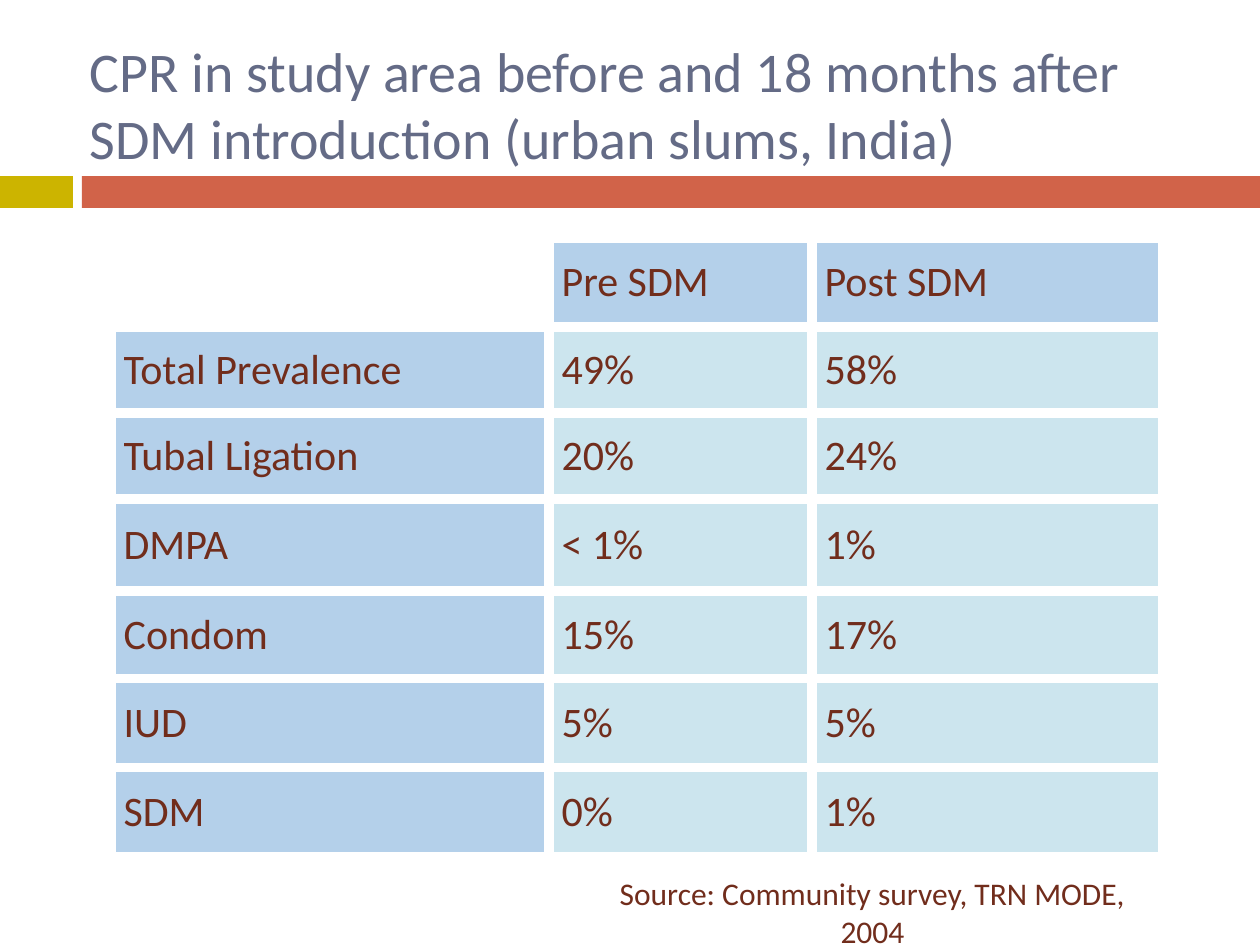
from lxml import etree
from pptx import Presentation
from pptx import util as u
from pptx.dml.color import RGBColor
from pptx.enum import shapes, text
from pptx.oxml.ns import qn

FONT = "Calibri"
BROWN, SLATE, WHITE = "712D1C", "646B86", "FFFFFF"
GOLD, RUST = "CCB400", "D16349"
LABEL_BLUE, VALUE_BLUE = "B4D0EA", "CCE5EE"
COLUMN_WIDTHS = (438, 263, 351)
ROW_HEIGHTS = (89, 86, 86, 92, 88, 89, 89)
PREVALENCE = (
    ("", "Pre SDM", "Post SDM"),
    ("Total Prevalence", "49%", "58%"),
    ("Tubal Ligation", "20%", "24%"),
    ("DMPA", "< 1%", "1%"),
    ("Condom", "15%", "17%"),
    ("IUD", "5%", "5%"),
    ("SDM", "0%", "1%"),
)


def px(length):
    """Turn pixels into EMU."""
    return u.Emu(round(length * 914400 / 126))


def paint(target, colour):
    """Give a fill or font colour format a hex colour."""
    target.rgb = RGBColor.from_string(colour)


def fill(item, colour):
    """Fill a shape or cell with a solid colour."""
    item.fill.solid()
    paint(item.fill.fore_color, colour)


def write(paragraph, words, size, colour, align=text.PP_ALIGN.LEFT):
    """Add one formatted run to a paragraph."""
    paragraph.alignment = align
    run = paragraph.add_run()
    run.text = words
    run.font.name = FONT
    run.font.size = u.Pt(size)
    paint(run.font.color, colour)


def add_bar(slide, left, width, colour):
    """Draw one piece of the divider under the title."""
    bar = slide.shapes.add_shape(
        shapes.MSO_SHAPE.RECTANGLE, px(left), px(176), px(width), px(32))
    bar.shadow.inherit = False
    fill(bar, colour)
    bar.line.fill.background()


def set_title(slide, words):
    """Place and format the title."""
    title = slide.shapes.title
    title.left, title.top, title.width, title.height = map(px, (77, 14, 1143, 180))
    frame = title.text_frame
    frame.word_wrap = True
    frame.auto_size = text.MSO_AUTO_SIZE.NONE
    frame.vertical_anchor = text.MSO_ANCHOR.MIDDLE
    write(frame.paragraphs[0], words, 32, SLATE)


def add_borders(cell, points, colour):
    """Draw the four borders of a cell."""
    properties = cell._tc.get_or_add_tcPr()
    for side in ("a:lnL", "a:lnR", "a:lnT", "a:lnB"):
        line = etree.SubElement(properties, qn(side), w=str(u.Pt(points)))
        solid = etree.SubElement(line, qn("a:solidFill"))
        etree.SubElement(solid, qn("a:srgbClr"), val=colour)


def space_before(paragraph, percent):
    """Set the space before a paragraph as a share of its line."""
    space = etree.SubElement(paragraph._p.get_or_add_pPr(), qn("a:spcBef"))
    etree.SubElement(space, qn("a:spcPct"), val=str(percent * 1000))


def fill_cell(cell, words, colour):
    """Format one table cell and write its words."""
    add_borders(cell, 6, WHITE)
    cell.vertical_anchor = text.MSO_ANCHOR.MIDDLE
    if not words:
        cell.fill.background()
        return
    fill(cell, colour)
    paragraph = cell.text_frame.paragraphs[0]
    space_before(paragraph, 20)
    write(paragraph, words, 24, BROWN)


def add_prevalence_table(slide):
    """Build the table of prevalence by method."""
    table = slide.shapes.add_table(
        len(ROW_HEIGHTS), len(COLUMN_WIDTHS), px(111), px(238),
        px(sum(COLUMN_WIDTHS)), px(sum(ROW_HEIGHTS))).table
    table.first_row = table.horz_banding = False
    for column, width in zip(table.columns, COLUMN_WIDTHS):
        column.width = px(width)
    for r, (height, entries) in enumerate(zip(ROW_HEIGHTS, PREVALENCE)):
        table.rows[r].height = px(height)
        for c, words in enumerate(entries):
            colour = VALUE_BLUE if r and c else LABEL_BLUE
            fill_cell(table.cell(r, c), words, colour)


def add_source(slide, words):
    """Add the centred source note below the table."""
    note = slide.shapes.add_textbox(px(576), px(868), px(593), px(50))
    note.text_frame.word_wrap = True
    write(note.text_frame.paragraphs[0], words, 18, BROWN, text.PP_ALIGN.CENTER)


def main():
    """Build and save the slide."""
    deck = Presentation()
    deck.slide_width, deck.slide_height = px(1260), px(945)
    slide = deck.slides.add_slide(deck.slide_layouts[5])
    add_bar(slide, 0, 73, GOLD)
    add_bar(slide, 82, 1178, RUST)
    set_title(slide, "CPR in study area before and 18 months after "
                     "SDM introduction (urban slums, India)")
    add_prevalence_table(slide)
    add_source(slide, "Source: Community survey, TRN MODE, 2004")
    deck.save("out.pptx")


if __name__ == "__main__":
    main()
